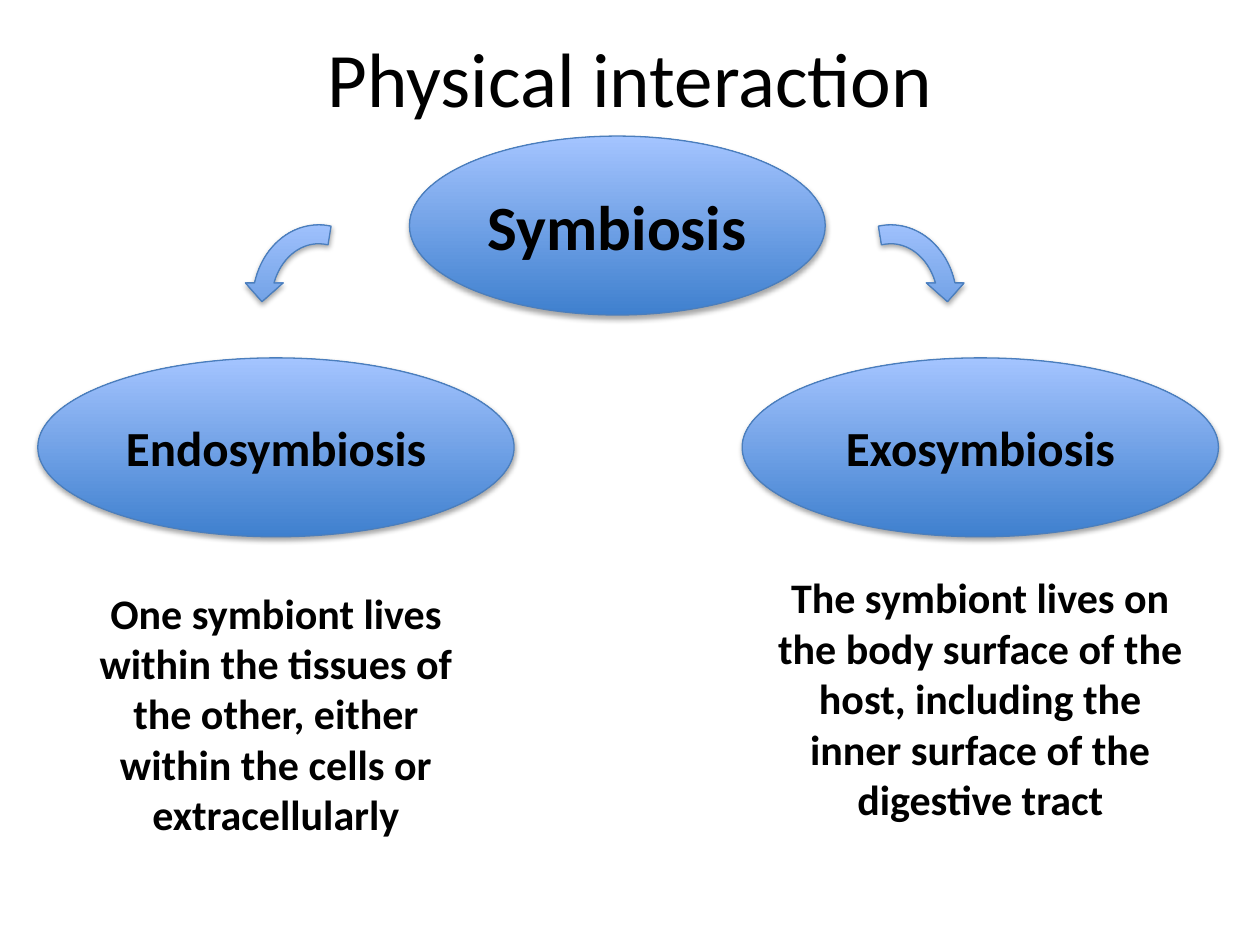
"""Build a slide that splits symbiosis into its two physical forms."""
from lxml.etree import SubElement
from pptx import Presentation
from pptx.dml.color import RGBColor
from pptx.enum.shapes import MSO_SHAPE
from pptx.enum.text import MSO_ANCHOR, PP_ALIGN
from pptx.oxml.ns import qn
from pptx.util import Inches, Pt

HUES = {"text": "000000", "deep": "3F80CE", "pale": "A4C4FF",
        "edge": "4B7EBC", "shade": "000000"}


def hue(name):
    return RGBColor.from_string(HUES[name])


def place(shape, left, top, width, height):
    shape.left, shape.top = Inches(left), Inches(top)
    shape.width, shape.height = Inches(width), Inches(height)


def write(shape, text, size=24, bold=True, anchor=MSO_ANCHOR.MIDDLE):
    frame = shape.text_frame
    frame.word_wrap = True
    frame.vertical_anchor = anchor
    para = frame.paragraphs[0]
    para.alignment = PP_ALIGN.CENTER
    run = para.add_run()
    run.text = text
    font = run.font
    font.name, font.size, font.bold = "Calibri", Pt(size), bold
    font.color.rgb = hue("text")


def shade(shape):
    shape.shadow.inherit = False
    effects = shape.element.spPr.find(qn("a:effectLst"))
    outer = SubElement(effects, qn("a:outerShdw"), blurRad=str(Pt(3.1)),
                       dist=str(Pt(1.8)), dir="5400000", rotWithShape="0")
    color = SubElement(outer, qn("a:srgbClr"), val=HUES["shade"])
    SubElement(color, qn("a:alpha"), val="35000")


def add_form(slide, kind, box):
    form = slide.shapes.add_shape(kind, *map(Inches, box))
    form.fill.gradient()
    form.fill.gradient_angle = 90
    for stop, name in zip(form.fill.gradient_stops, ("deep", "pale")):
        stop.color.rgb = hue(name)
    form.line.color.rgb = hue("edge")
    form.line.width = Pt(0.75)
    shade(form)
    return form


def add_oval(slide, text, box, size=28):
    write(add_form(slide, MSO_SHAPE.OVAL, box), text, size=size)


def add_note(slide, text, box):
    note = slide.shapes.add_textbox(*map(Inches, box))
    write(note, text, anchor=MSO_ANCHOR.TOP)


def add_arrow(slide, left, flip=False):
    arrow = add_form(slide, MSO_SHAPE.CIRCULAR_ARROW, (left, 1.71, 1.2, 1.37))
    for spot, value in enumerate((0.125, 11.423, 204.577, 156.404, 0.125)):
        arrow.adjustments[spot] = value
    if flip:
        arrow.element.spPr.xfrm.set("flipH", "1")


def main():
    deck = Presentation()
    deck.slide_width, deck.slide_height = Inches(10), Inches(7.5)
    slide = deck.slides.add_slide(deck.slide_layouts[5])
    title = slide.shapes.title
    place(title, 0.5, 0.12, 9, 0.97)
    write(title, "Physical interaction", size=44, bold=False)

    add_oval(slide, "Symbiosis", (3.25, 1.08, 3.3, 1.42), size=36)
    for text, left in (("Endosymbiosis", 0.3), ("Exosymbiosis", 5.89)):
        add_oval(slide, text, (left, 2.84, 3.78, 1.42))
    add_note(slide, "One symbiont lives within the tissues of the other, "
             "either within the cells or extracellularly",
             (0.5, 4.61, 3.38, 2.12))
    add_note(slide, "The symbiont lives on the body surface of the host, "
             "including the inner surface of the digestive tract",
             (6.06, 4.49, 3.44, 2.12))
    add_arrow(slide, 1.93, flip=True)
    add_arrow(slide, 6.47)
    deck.save("out.pptx")


if __name__ == "__main__":
    main()
